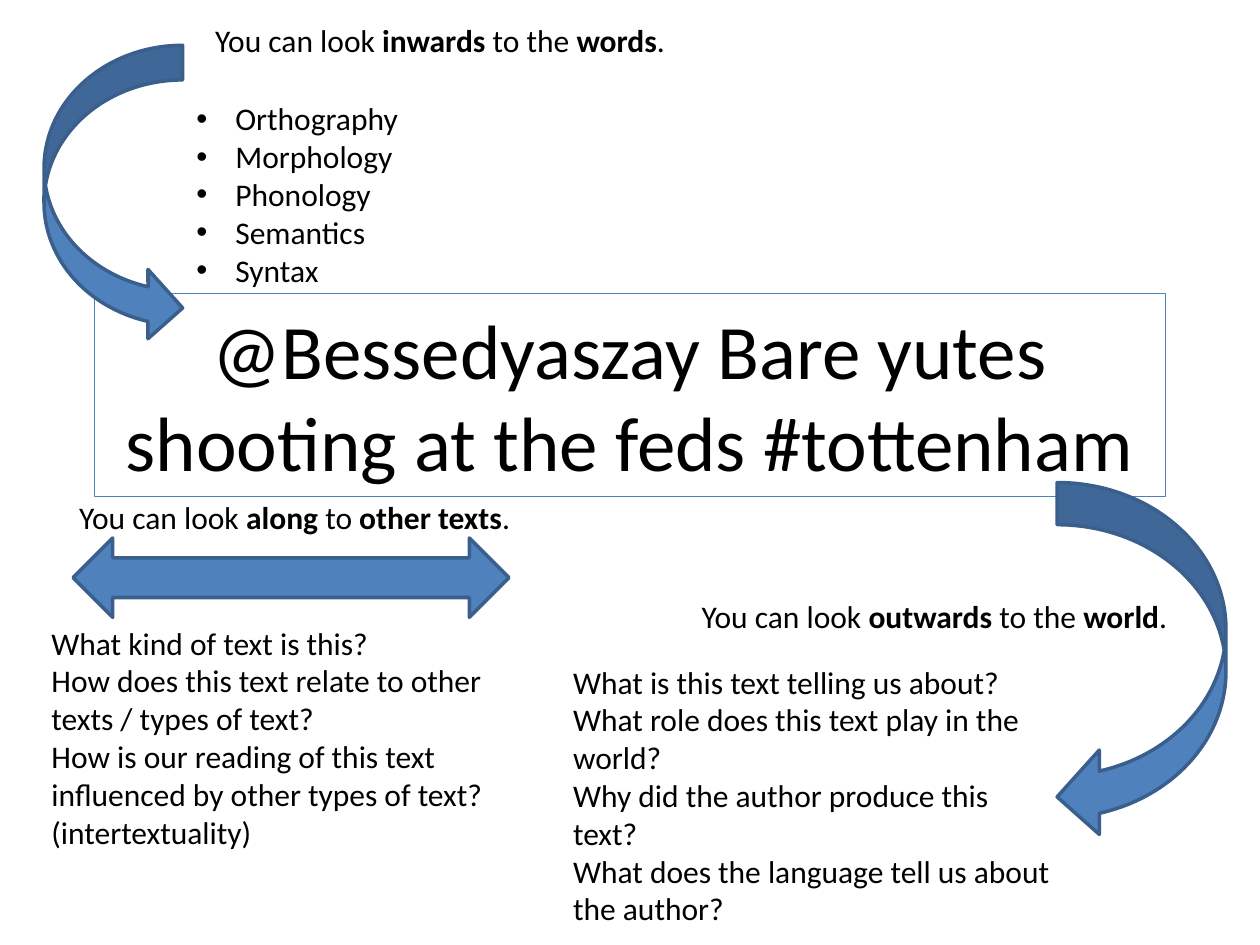
from lxml import etree
from pptx import Presentation
from pptx.dml.color import RGBColor
from pptx.enum.shapes import MSO_SHAPE
from pptx.enum.text import MSO_ANCHOR, MSO_AUTO_SIZE, PP_ALIGN
from pptx.oxml.ns import qn
from pptx.util import Inches, Pt

COLORS = {"text": "000000", "blue": "4F81BD", "outline": "3A5F8C"}
FONT = "Calibri"
BULLET_INDENT = 0.31

TITLE = "@Bessedyaszay Bare yutes shooting at the feds #tottenham"
TITLE_AREA = (0.75, 2.33, 8.5, 1.61)

# Words between asterisks are bold.
HEADINGS = [
    ("You can look *inwards* to the *words*.", (1.61, 0.12, 3.95, 0.4)),
    ("You can look *outwards* to the *world*.", (5.47, 4.69, 4.13, 0.4)),
    ("You can look *along* to *other texts*.", (0.53, 3.9, 4.13, 0.4)),
]
WORD_LEVELS = ["Orthography", "Morphology", "Phonology", "Semantics", "Syntax"]
WORLD_QUESTIONS = [
    "What is this text telling us about?",
    "What role does this text play in the world?",
    "Why did the author produce this text?",
    "What does the language tell us about the author?",
]
TEXT_QUESTIONS = [
    "What kind of text is this?",
    "How does this text relate to other texts / types of text?",
    "How is our reading of this text influenced by other types of text? "
    "(intertextuality)",
]
LISTS = [
    (WORD_LEVELS, (1.46, 0.74, 2.28, 1.62), True),
    (WORLD_QUESTIONS, (4.45, 5.21, 4.01, 2.22), False),
    (TEXT_QUESTIONS, (0.31, 4.9, 4.01, 1.92), False),
]
ARROWS = [
    (MSO_SHAPE.CURVED_RIGHT_ARROW, (0.35, 0.36, 1.1, 2.36)),
    (MSO_SHAPE.CURVED_LEFT_ARROW, (8.39, 3.83, 1.34, 2.83)),
    (MSO_SHAPE.LEFT_RIGHT_ARROW, (0.58, 4.27, 3.46, 0.63)),
]


def color(name):
    return RGBColor.from_string(COLORS[name])


def inches(area):
    return [Inches(length) for length in area]


def style(para, size):
    para.font.name = FONT
    para.font.size = Pt(size)
    para.font.color.rgb = color("text")


def add_bullet(para):
    properties = para._p.get_or_add_pPr()
    properties.set("marL", str(Inches(BULLET_INDENT)))
    properties.set("indent", str(-Inches(BULLET_INDENT)))
    bullet_font = etree.SubElement(properties, qn("a:buFont"))
    bullet_font.set("typeface", "Arial")
    etree.SubElement(properties, qn("a:buChar")).set("char", "•")
    # Text defaults must follow the bullet in the schema's order.
    properties.append(properties.find(qn("a:defRPr")))


def add_text(page, lines, area, bulleted=False):
    frame = page.shapes.add_textbox(*inches(area)).text_frame
    frame.word_wrap = True
    frame.auto_size = MSO_AUTO_SIZE.SHAPE_TO_FIT_TEXT
    for number, line in enumerate(lines):
        para = frame.add_paragraph() if number else frame.paragraphs[0]
        style(para, 18)
        if bulleted:
            add_bullet(para)
        for position, words in enumerate(line.split("*")):
            span = para.add_run()
            span.text = words
            span.font.bold = position % 2 == 1


def add_title(page):
    title = page.shapes.title
    title.left, title.top, title.width, title.height = inches(TITLE_AREA)
    title.line.color.rgb = color("blue")
    title.line.width = Pt(0.75)
    frame = title.text_frame
    frame.text = TITLE
    frame.vertical_anchor = MSO_ANCHOR.MIDDLE
    frame.paragraphs[0].alignment = PP_ALIGN.CENTER
    style(frame.paragraphs[0], 44)


def add_arrow(page, kind, area):
    arrow = page.shapes.add_shape(kind, *inches(area))
    arrow.shadow.inherit = False
    arrow.fill.solid()
    arrow.fill.fore_color.rgb = color("blue")
    arrow.line.color.rgb = color("outline")
    arrow.line.width = Pt(2)


def main():
    deck = Presentation()
    deck.slide_width, deck.slide_height = Inches(10), Inches(7.5)
    page = deck.slides.add_slide(deck.slide_layouts[0])
    subtitle = page.placeholders[1].element
    subtitle.getparent().remove(subtitle)

    add_title(page)
    for kind, area in ARROWS:
        add_arrow(page, kind, area)
    for heading, area in HEADINGS:
        add_text(page, [heading], area)
    for lines, area, bulleted in LISTS:
        add_text(page, lines, area, bulleted)
    deck.save("out.pptx")


if __name__ == "__main__":
    main()
